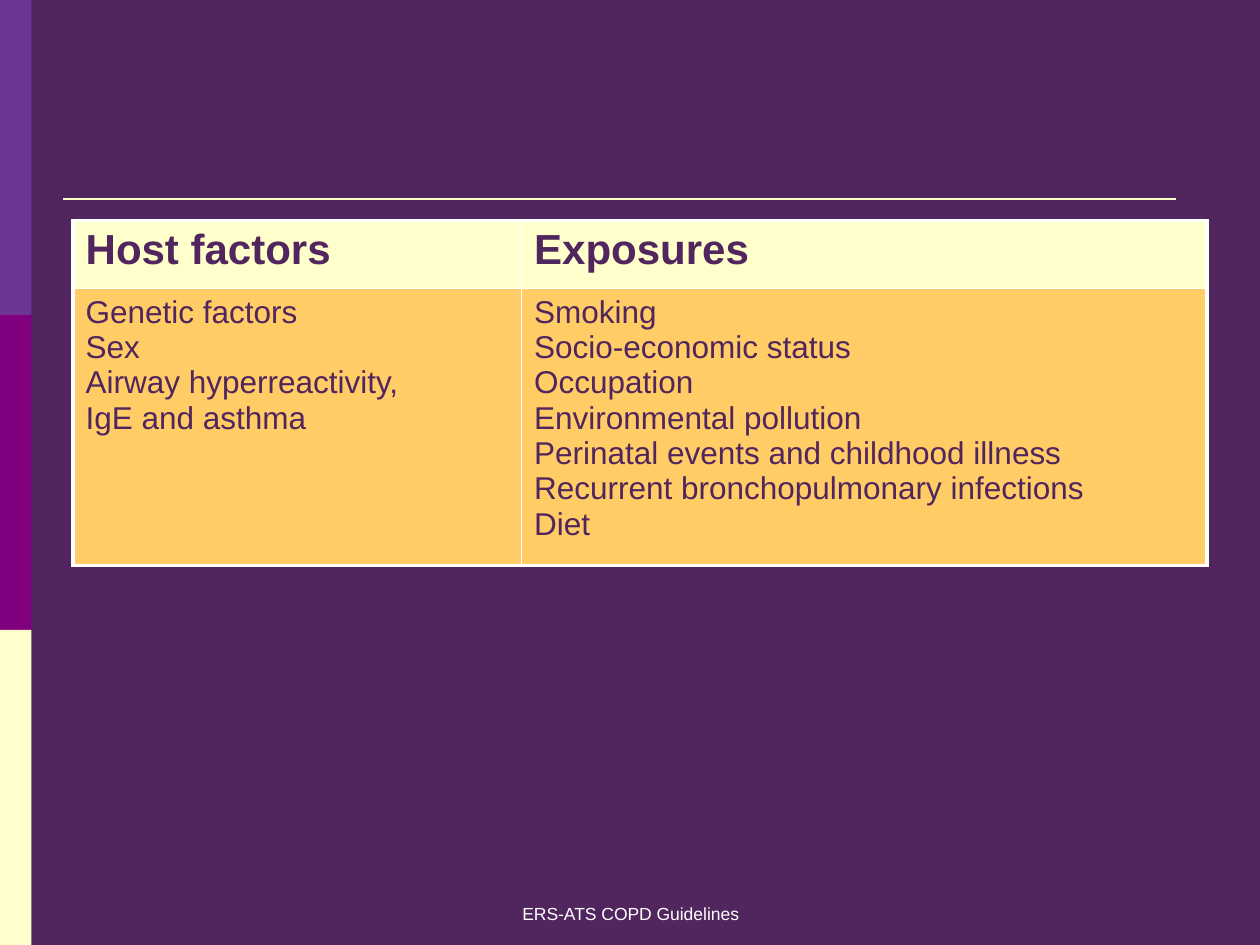
from lxml.etree import SubElement
from pptx import Presentation
from pptx.dml.color import RGBColor as Rgb
from pptx.enum.shapes import MSO_CONNECTOR as Link, MSO_SHAPE as Form
from pptx.enum.text import MSO_ANCHOR as Anchor, PP_ALIGN as Align
from pptx.oxml import parse_xml
from pptx.oxml.ns import nsdecls, qn
from pptx.util import Inches, Pt

HUES = {"back": "51255D", "top": "6D3696", "mid": "800080",
        "cream": "FFFFCC", "gold": "FFCC66", "white": "FFFFFF"}
FORMS = {
    "head": {"name": "Arial", "size": Pt(24), "bold": True},
    "body": {"name": "Arial", "size": Pt(18), "bold": False},
    "foot": {"name": "Arial", "size": Pt(10), "bold": False},
}
ROWS = [
    ("head", "cream", 0.54, ["Host factors", "Exposures"]),
    ("body", "gold", 2.14, [
        "Genetic factors\nSex\nAirway hyperreactivity,\nIgE and asthma",
        "Smoking\nSocio-economic status\vOccupation\nEnvironmental pollution\n"
        "Perinatal events and childhood illness\n"
        "Recurrent bronchopulmonary infections\vDiet",
    ]),
]
COLS = [3.56, 5.44]


def hue(key):
    return Rgb.from_string(HUES[key])


def style(frame, form, tint):
    for para in frame.paragraphs:
        for run in para.runs:
            for key, val in FORMS[form].items():
                setattr(run.font, key, val)
            run.font.color.rgb = hue(tint)


deck = Presentation()
deck.slide_width, deck.slide_height = Inches(10), Inches(7.5)
wide, high = deck.slide_width, deck.slide_height
slide = deck.slides.add_slide(deck.slide_layouts[6])
slide.background.fill.solid()
slide.background.fill.fore_color.rgb = hue("back")
shapes = slide.shapes

third = high // 3
for row, key in enumerate(["top", "mid", "cream"]):
    band = shapes.add_shape(Form.RECTANGLE, 0, row * third, wide // 40, third)
    band.shadow.inherit = False
    band.fill.solid()
    band.fill.fore_color.rgb = hue(key)
    band.line.fill.background()

rule = shapes.add_connector(Link.STRAIGHT, wide // 20, Inches(1.58),
                            Inches(9.33), Inches(1.58))
rule.line.color.rgb = hue("cream")
rule.line.width = Pt(1.5)
SubElement(rule.element.spPr, qn("a:effectLst"))

foot = shapes.add_textbox(Inches(3.42), Inches(7.14), Inches(3.17), Inches(0.22))
frame = foot.text_frame
frame.word_wrap = True
frame.margin_top = frame.margin_bottom = 0
frame.vertical_anchor = Anchor.MIDDLE
frame.text = "ERS-ATS COPD Guidelines"
frame.paragraphs[0].alignment = Align.CENTER
style(frame, "foot", "white")

table = shapes.add_table(2, 2, Inches(0.58), Inches(1.75), Inches(sum(COLS)),
                         Inches(sum(row[2] for row in ROWS))).table
for col, size in zip(table.columns, COLS):
    col.width = Inches(size)

for y, (form, fill, size, texts) in enumerate(ROWS):
    table.rows[y].height = Inches(size)
    for x, text in enumerate(texts):
        cell = table.cell(y, x)
        cell.text = text
        style(cell.text_frame, form, "back")
        cell.fill.solid()
        cell.fill.fore_color.rgb = hue(fill)
        props = cell._tc.get_or_add_tcPr()
        outer = {"L": x == 0, "R": x == 1, "T": y == 0, "B": y == 1}
        for spot, (side, edge) in enumerate(outer.items()):
            width = Pt(2.25 if edge else 1)
            props.insert(spot, parse_xml(
                f'<a:ln{side} {nsdecls("a")} w="{width}"><a:solidFill>'
                f'<a:srgbClr val="{HUES["white"]}"/></a:solidFill></a:ln{side}>'))

deck.save("out.pptx")
